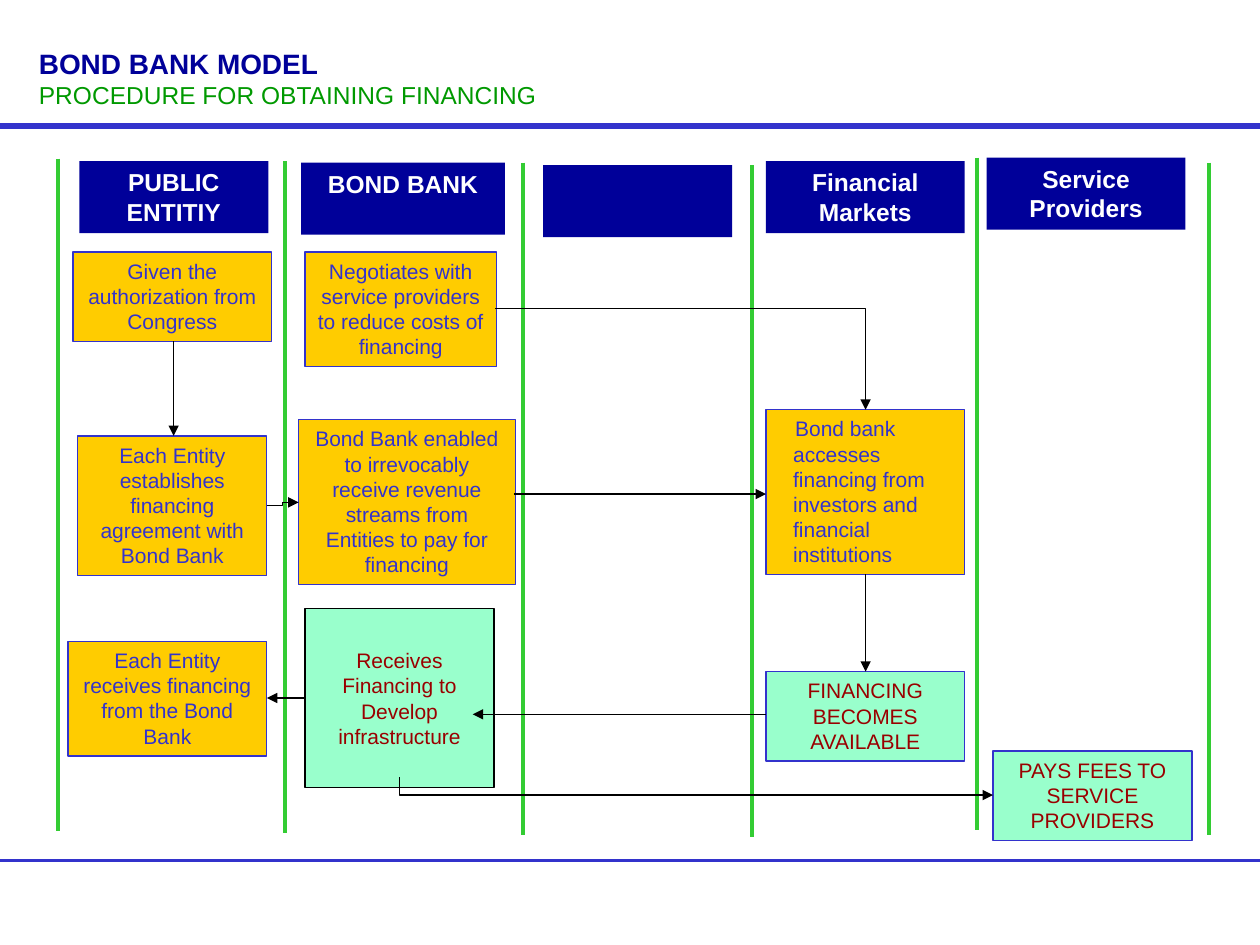
from lxml import etree
from pptx import Presentation
from pptx.dml.color import RGBColor
from pptx.enum import shapes, text
from pptx.oxml import ns
from pptx.util import Cm, Pt

COLORS = {
    "navy": "000099", "blue": "3333CC", "lane": "33CC33", "green": "009900",
    "gold": "FFCC00", "mint": "99FFCC", "maroon": "990000",
    "white": "FFFFFF", "black": "000000",
}
LANE_HEIGHT = 13.55
HEADER_HEIGHT = 1.45
LANES = [(1.17, 3.2), (5.74, 3.25), (10.54, 3.28),
         (15.16, 3.33), (19.69, 3.18), (24.38, 3.28)]
HEADERS = [
    ("PUBLIC ENTITIY", 1.6, 3.25, 3.81),
    ("BOND BANK", 6.07, 3.28, 4.11),
    ("", 10.95, 3.33, 3.81),
    ("Financial Markets", 15.44, 3.25, 4.01),
    ("Service Providers", 19.89, 3.18, 4.01),
]
STEPS = [
    ("Given the authorization from Congress", 1.47, 5.08, 4.01, 1.8),
    ("Each Entity establishes financing agreement with Bond Bank",
     1.57, 8.79, 3.81, 2.82),
    ("Each Entity receives financing from the Bond Bank",
     1.37, 12.93, 4.01, 2.31),
    ("Negotiates with service providers to reduce costs of financing",
     6.15, 5.08, 3.86, 2.31),
    ("Bond Bank enabled to irrevocably receive revenue streams from "
     "Entities to pay for financing", 6.02, 8.46, 4.37, 3.33),
]
OUTCOMES = [
    ("FINANCING BECOMES AVAILABLE", 15.44, 13.54, 4.01, 1.8),
    ("PAYS FEES TO SERVICE PROVIDERS", 20.02, 15.14, 4.01, 1.8),
]
STRAIGHT_ARROWS = [
    (3.5, 6.88, 3.5, 8.79),
    (10.36, 9.96, 15.44, 9.96),
    (17.45, 11.58, 17.45, 13.54),
    (15.44, 14.4, 9.53, 14.4),
    (6.15, 14.07, 5.38, 14.07),
]


def rgb(name):
    return RGBColor.from_string(COLORS[name])


def set_font(p, size, color, bold=False):
    p.font.name = "Arial"
    p.font.size = Pt(size)
    p.font.bold = bold
    p.font.color.rgb = rgb(color)


def add_title(s):
    sp = s.shapes.title
    sp.left, sp.top, sp.width, sp.height = Cm(0.53), Cm(0.84), Cm(24.33), Cm(1.45)
    tf = sp.text_frame
    tf.text = "BOND BANK MODEL\nPROCEDURE FOR OBTAINING FINANCING"
    tf.auto_size = text.MSO_AUTO_SIZE.NONE
    tf.vertical_anchor = text.MSO_ANCHOR.MIDDLE
    for p in tf.paragraphs:
        p.alignment = text.PP_ALIGN.LEFT
    set_font(tf.paragraphs[0], 16, "navy", True)
    set_font(tf.paragraphs[1], 14, "green")


def add_box(s, label, x, y, w, h, fill, line, color, size=12, bold=False):
    sp = s.shapes.add_shape(shapes.MSO_SHAPE.RECTANGLE, Cm(x), Cm(y), Cm(w), Cm(h))
    sp.shadow.inherit = False
    sp.fill.solid()
    sp.fill.fore_color.rgb = rgb(fill)
    if line:
        sp.line.color.rgb = rgb(line)
        sp.line.width = Pt(0.75)
    else:
        sp.line.fill.background()
    tf = sp.text_frame
    tf.word_wrap = True
    tf.vertical_anchor = text.MSO_ANCHOR.TOP
    tf.text = label
    for p in tf.paragraphs:
        p.alignment = text.PP_ALIGN.CENTER
        set_font(p, size, color, bold)
    return sp


def add_line(s, x1, y1, x2, y2, color, width, kind=shapes.MSO_CONNECTOR.STRAIGHT):
    c = s.shapes.add_connector(kind, Cm(x1), Cm(y1), Cm(x2), Cm(y2))
    c.line.color.rgb = rgb(color)
    c.line.width = Pt(width)
    etree.SubElement(c._element.spPr, ns.qn("a:effectLst"))
    return c


def add_arrow(s, x1, y1, x2, y2, kind=shapes.MSO_CONNECTOR.STRAIGHT, end="tailEnd"):
    c = add_line(s, x1, y1, x2, y2, "black", 0.75, kind)
    etree.SubElement(c.line._get_or_add_ln(), ns.qn(f"a:{end}"), type="triangle")
    return c


def add_corner_arrow(s, x1, y1, x2, y2, end="tailEnd"):
    c = add_arrow(s, x1, y1, x2, y2, shapes.MSO_CONNECTOR.ELBOW, end)
    c._element.spPr.find(ns.qn("a:prstGeom")).set("prst", "bentConnector2")


def add_market_step(s):
    sp = add_box(s, "Bond bank accesses financing from investors and financial "
                 "institutions", 15.44, 8.26, 4.01, 3.33, "gold", "blue", "blue")
    p = sp.text_frame.paragraphs[0]
    p.alignment = text.PP_ALIGN.LEFT
    pPr = p._p.get_or_add_pPr()
    pPr.set("marL", str(Cm(0.3)))
    pPr.set("indent", str(Cm(0.04)))


def add_receipt_step(s):
    sp = add_box(s, "Receives\nFinancing to\nDevelop\ninfrastructure",
                 6.15, 12.27, 3.81, 3.61, "mint", "black", "maroon")
    sp.text_frame.word_wrap = False
    sp.text_frame.vertical_anchor = text.MSO_ANCHOR.MIDDLE


def main():
    prs = Presentation()
    prs.slide_width, prs.slide_height = Cm(25.4), Cm(19.05)
    s = prs.slides.add_slide(prs.slide_layouts[5])
    add_title(s)
    add_line(s, 0, 2.54, 25.4, 2.54, "blue", 3)
    add_line(s, 0, 17.35, 25.4, 17.35, "blue", 1.5)
    for x, y in LANES:
        add_line(s, x, y, x, y + LANE_HEIGHT, "lane", 2.25)
    for label, x, y, w in HEADERS:
        add_box(s, label, x, y, w, HEADER_HEIGHT, "navy", None, "white", 14, True)
    for step in STEPS:
        add_box(s, *step, "gold", "blue", "blue")
    for outcome in OUTCOMES:
        add_box(s, *outcome, "mint", "blue", "maroon")
    add_market_step(s)
    add_receipt_step(s)
    for ends in STRAIGHT_ARROWS:
        add_arrow(s, *ends)
    add_arrow(s, 5.38, 10.19, 6.02, 10.13, shapes.MSO_CONNECTOR.ELBOW)
    add_corner_arrow(s, 9.98, 6.22, 17.45, 8.26)
    add_corner_arrow(s, 20.02, 16.03, 8.05, 15.67, "headEnd")
    prs.save("out.pptx")


if __name__ == "__main__":
    main()
